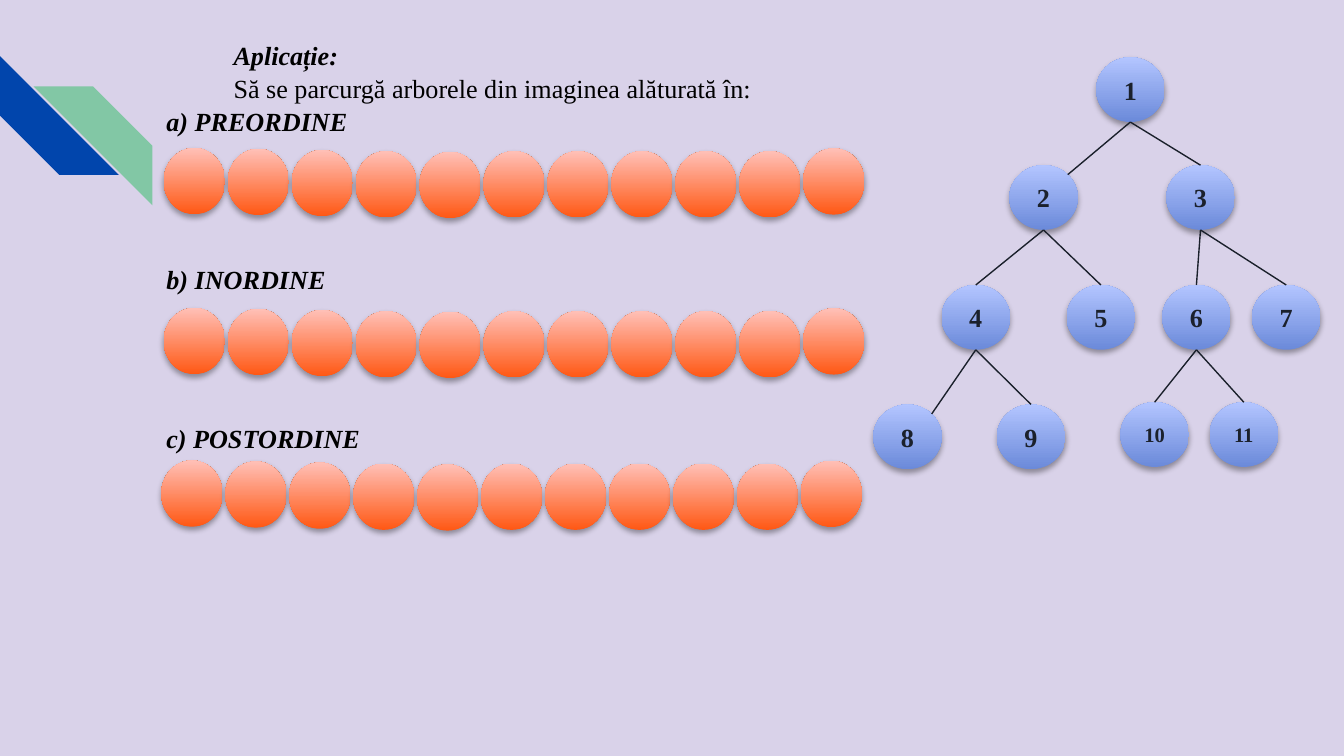
from math import sqrt

from lxml import etree
from pptx import Presentation
from pptx.dml.color import RGBColor
from pptx.enum.shapes import MSO_CONNECTOR, MSO_SHAPE
from pptx.enum.text import MSO_ANCHOR, MSO_AUTO_SIZE, PP_ALIGN
from pptx.oxml import parse_xml
from pptx.oxml.ns import qn
from pptx.util import Pt

OVAL = MSO_SHAPE.OVAL
STRIPE = MSO_SHAPE.DIAGONAL_STRIPE
STRAIGHT = MSO_CONNECTOR.STRAIGHT
MIDDLE = MSO_ANCHOR.MIDDLE
GROW = MSO_AUTO_SIZE.SHAPE_TO_FIT_TEXT
CENTER, JUSTIFY = PP_ALIGN.CENTER, PP_ALIGN.JUSTIFY

SHADOW = (
    '<a:effectLst xmlns:a="http://schemas.openxmlformats.org/drawingml/2006/main">'
    '<a:outerShdw blurRad="39370" dist="22860" dir="5400000" rotWithShape="0">'
    '<a:srgbClr val="000000"><a:alpha val="35000"/></a:srgbClr>'
    '</a:outerShdw></a:effectLst>'
)
ORANGE = ("FF5814", "FFC0B7")
BLUE = ("6B8ADA", "B3C5FF")
NODE_W, NODE_H = 36.7, 34.7
SLOT_W, SLOT_H, SLOT_PITCH = 32.8, 35.5, 34.25
SLOT_DROPS = [0, 0.5, 1.1, 1.7, 2.1, 1.7, 1.7, 1.7, 1.7, 1.7, 0.2]
SLOT_ROWS = [(87.7, 79.3), (87.7, 165), (86.4, 246.7)]

LINES = [
    ("Aplicație:", True, 36, 0),
    ("Să se parcurgă arborele din imaginea alăturată în:", False, 36, 0),
    ("a) PREORDINE", True, 0, 0),
    ("b) INORDINE", True, 0, 67.5),
    ("c) POSTORDINE", True, 0, 67.5),
]
NODES = {
    1: (587.2, 30.7),
    2: (540.7, 88.5), 3: (624.8, 88.5),
    4: (504.4, 152.7), 5: (571.4, 152.7), 6: (622.6, 152.7), 7: (670.7, 152.7),
    8: (467.8, 216.7), 9: (534, 216.7), 10: (600.2, 215.5), 11: (648, 215.5),
}
CHILDREN = {1: (2, 3), 2: (4, 5), 3: (6, 7), 4: (8, 9), 6: (10, 11)}
CORNER_JOINED = (2, 8)


def rgb(code):
    return RGBColor.from_string(code)


class TreeSlide:
    """Draws the traversal exercise on one blank slide in a shared style."""

    def __init__(self, deck, background):
        self.font = {"name": "Times New Roman", "size": Pt(14), "bold": True}
        self.slide = deck.slides.add_slide(deck.slide_layouts[6])
        self.slide.background.fill.solid()
        self.slide.background.fill.fore_color.rgb = rgb(background)

    def words(self, paragraph, text, color, **changes):
        run = paragraph.add_run()
        run.text = text
        for attribute, value in {**self.font, **changes}.items():
            setattr(run.font, attribute, value)
        run.font.color.rgb = rgb(color)

    def stripe(self, left, top, color, rotation=0, flipped=False):
        band = self.slide.shapes.add_shape(STRIPE, Pt(left), Pt(top), Pt(63.7), Pt(63.7))
        band.shadow.inherit = False
        band.adjustments[0] = 0.5
        band.rotation = rotation
        band.fill.solid()
        band.fill.fore_color.rgb = rgb(color)
        band.line.fill.background()
        if flipped:
            band._element.spPr.find(qn("a:xfrm")).set("flipH", "1")

    def ball(self, left, top, width, height, colors):
        ball = self.slide.shapes.add_shape(OVAL, Pt(left), Pt(top), Pt(width), Pt(height))
        ball.line.fill.background()
        ball.fill.gradient()
        ball.fill.gradient_angle = 90
        for stop, color in zip(ball.fill.gradient_stops, colors):
            stop.color.rgb = rgb(color)
        ball._element.spPr.append(parse_xml(SHADOW))
        return ball

    def node(self, number, left, top):
        node = self.ball(left, top, NODE_W, NODE_H, BLUE)
        frame = node.text_frame
        layout = {"margin_left": 0, "margin_right": 0, "word_wrap": True,
                  "vertical_anchor": MIDDLE}
        for attribute, value in layout.items():
            setattr(frame, attribute, value)
        frame.paragraphs[0].alignment = CENTER
        size = Pt(14 if number < 10 else 11)
        self.words(frame.paragraphs[0], str(number), "1B212C", size=size)
        return node

    def edge(self, parent, child, at_corner):
        start_x = parent.left + parent.width // 2
        start_y = parent.top + parent.height
        reach = 1 / sqrt(2)
        end_x = child.left + int(child.width / 2 * (1 + reach))
        end_y = child.top + int(child.height / 2 * (1 - reach))
        edge = self.slide.shapes.add_connector(STRAIGHT, start_x, start_y, end_x, end_y)
        if not at_corner:
            edge.end_connect(child, 0)
        edge.line.color.rgb = rgb("1A202B")
        edge.line.width = Pt(0.75)
        etree.SubElement(edge._element.spPr, qn("a:effectLst"))

    def task(self, left, top, width, height, lines):
        box = self.slide.shapes.add_textbox(Pt(left), Pt(top), Pt(width), Pt(height))
        frame = box.text_frame
        frame.word_wrap = True
        frame.auto_size = GROW
        for index, (text, strong, indent, gap) in enumerate(lines):
            paragraph = frame.add_paragraph() if index else frame.paragraphs[0]
            layout = {"alignment": JUSTIFY, "line_spacing": 1.05, "space_before": Pt(gap)}
            for attribute, value in layout.items():
                setattr(paragraph, attribute, value)
            paragraph._p.get_or_add_pPr().set("indent", str(Pt(indent)))
            self.words(paragraph, text, "000000", bold=strong, italic=strong)


def main():
    deck = Presentation()
    deck.slide_width, deck.slide_height = Pt(720), Pt(405)
    page = TreeSlide(deck, "D9D2E9")
    page.stripe(0, 30, "0145AC", rotation=270)
    page.stripe(18, 46.3, "82C7A5", flipped=True)
    page.task(82, 16.6, 411, 242.6, LINES)
    for left, top in SLOT_ROWS:
        for column, drop in enumerate(SLOT_DROPS):
            page.ball(left + column * SLOT_PITCH, top + drop, SLOT_W, SLOT_H, ORANGE)
    nodes = {number: page.node(number, *place) for number, place in NODES.items()}
    for parent, children in CHILDREN.items():
        for child in children:
            page.edge(nodes[parent], nodes[child], child in CORNER_JOINED)
    deck.save("out.pptx")


if __name__ == "__main__":
    main()
